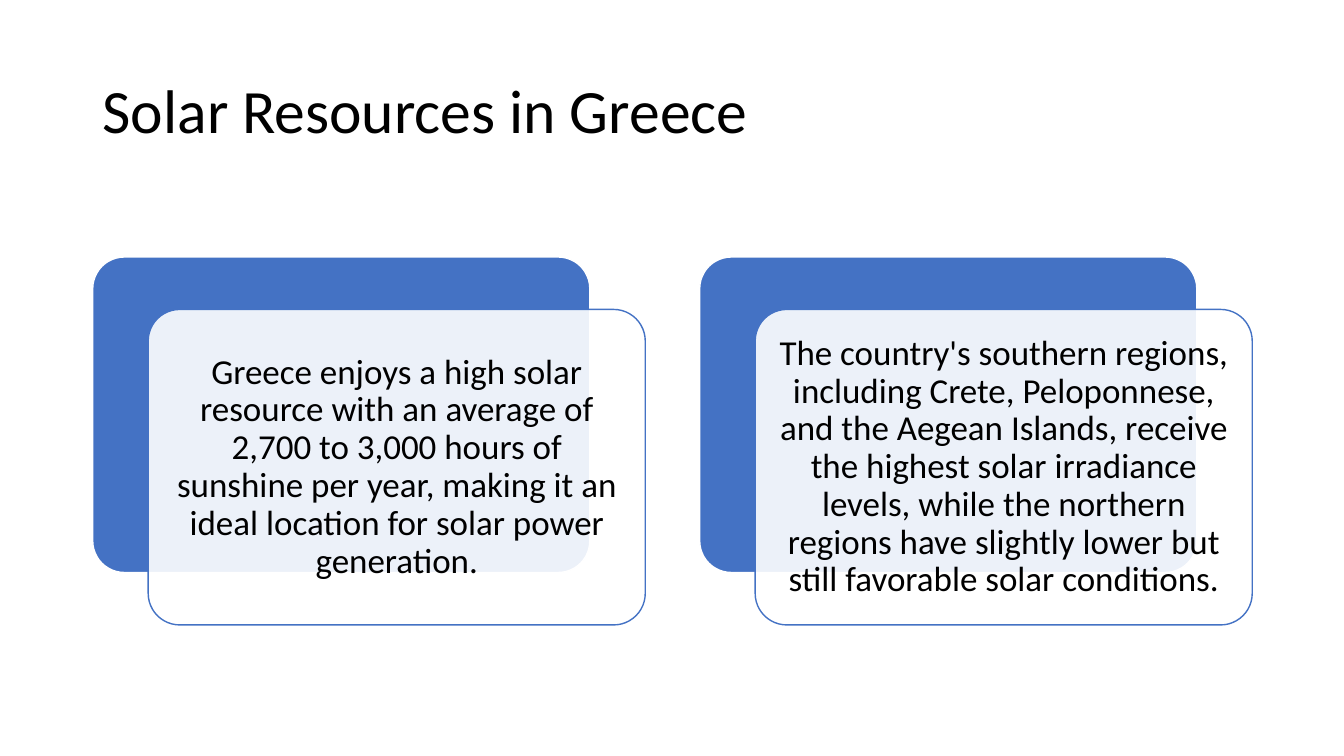
import pptx
import pptx.util
import pptx.dml.color
import pptx.enum.shapes
import pptx.enum.text
import pptx.oxml
import pptx.oxml.ns

Inches = pptx.util.Inches
Pt = pptx.util.Pt

COLORS = {"text": "000000", "accent": "4472C4", "panel": "FFFFFF"}
FONT = "Calibri"
SLIDE_WIDTH, SLIDE_HEIGHT = 13.33, 7.5
MARGIN = 0.92
CARD_TOP, CARD_WIDTH, CARD_HEIGHT = 2.55, 4.93, 3.13
COLUMN_STEP = 6.02
PANEL_SHIFT_X, PANEL_SHIFT_Y = 0.55, 0.52
TEXT_INSET = 0.09

FACTS = [
    "Greece enjoys a high solar resource with an average of 2,700 to 3,000 "
    "hours of sunshine per year, making it an ideal location for solar power "
    "generation.",
    "The country's southern regions, including Crete, Peloponnese, and the "
    "Aegean Islands, receive the highest solar irradiance levels, while the "
    "northern regions have slightly lower but still favorable solar conditions.",
]


def color(name):
    return pptx.dml.color.RGBColor.from_string(COLORS[name])


def add_text(page, text, left, top, width, height, size, align, margin_x, margin_y):
    box = page.shapes.add_textbox(Inches(left), Inches(top), Inches(width), Inches(height))
    frame = box.text_frame
    frame.word_wrap = True
    frame.vertical_anchor = pptx.enum.text.MSO_ANCHOR.MIDDLE
    frame.margin_left = frame.margin_right = Inches(margin_x)
    frame.margin_top = frame.margin_bottom = Inches(margin_y)
    frame.text = text
    para = frame.paragraphs[0]
    para.alignment = align
    para.line_spacing = 0.9
    span = para.runs[0]
    span.font.name = FONT
    span.font.size = Pt(size)
    span.font.color.rgb = color("text")


def add_panel(page, left, top, fill, line, opacity=100):
    panel = page.shapes.add_shape(
        pptx.enum.shapes.MSO_SHAPE.ROUNDED_RECTANGLE,
        Inches(left), Inches(top), Inches(CARD_WIDTH), Inches(CARD_HEIGHT))
    panel.adjustments[0] = 0.1
    panel.shadow.inherit = False
    panel.fill.solid()
    panel.fill.fore_color.rgb = color(fill)
    panel.line.color.rgb = color(line)
    panel.line.width = Pt(1)
    if opacity < 100:
        solid = panel.fill._xPr.find(pptx.oxml.ns.qn("a:solidFill"))
        alpha = pptx.oxml.parse_xml(
            f'<a:alpha {pptx.oxml.ns.nsdecls("a")} val="{opacity * 1000}"/>')
        solid[0].append(alpha)


def add_card(page, column, text):
    left = MARGIN + column * COLUMN_STEP
    panel_left, panel_top = left + PANEL_SHIFT_X, CARD_TOP + PANEL_SHIFT_Y
    add_panel(page, left, CARD_TOP, "accent", "panel")
    add_panel(page, panel_left, panel_top, "panel", "accent", opacity=90)
    add_text(page, text, panel_left + TEXT_INSET, panel_top + TEXT_INSET,
             CARD_WIDTH - 2 * TEXT_INSET, CARD_HEIGHT - 2 * TEXT_INSET,
             25, pptx.enum.text.PP_ALIGN.CENTER, 0.1, 0.1)


def main():
    deck = pptx.Presentation()
    deck.slide_width = Inches(SLIDE_WIDTH)
    deck.slide_height = Inches(SLIDE_HEIGHT)
    page = deck.slides.add_slide(deck.slide_layouts[6])
    add_text(page, "Solar Resources in Greece", MARGIN, 0.4,
             SLIDE_WIDTH - 2 * MARGIN, 1.45,
             44, pptx.enum.text.PP_ALIGN.LEFT, 0.1, 0.05)
    for column, fact in enumerate(FACTS):
        add_card(page, column, fact)
    deck.save("out.pptx")


if __name__ == "__main__":
    main()
